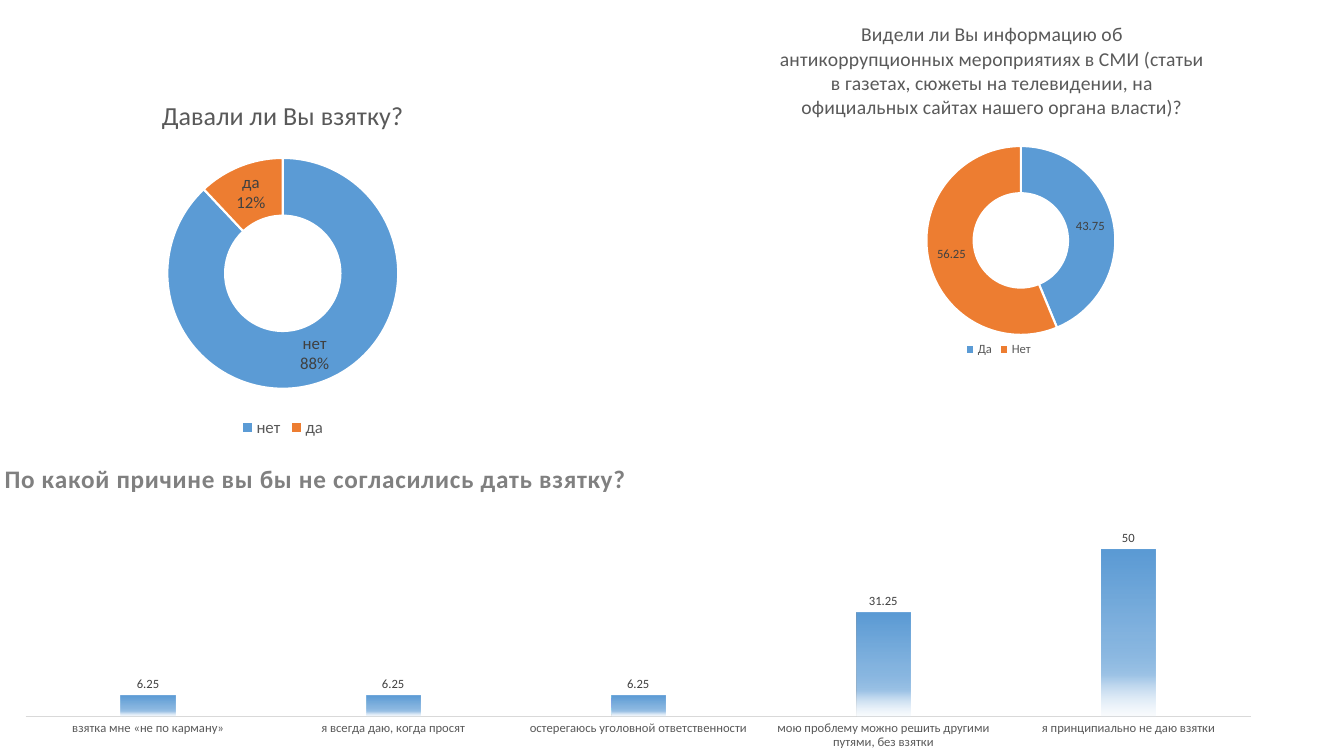
from lxml import etree
from pptx import Presentation
from pptx.chart.data import CategoryChartData
from pptx.dml.color import RGBColor
from pptx.enum.chart import XL_CHART_TYPE as ChartType
from pptx.enum.chart import XL_LABEL_POSITION as LabelPosition
from pptx.enum.chart import XL_LEGEND_POSITION as LegendPosition
from pptx.enum.chart import XL_TICK_MARK as TickMark
from pptx.oxml import parse_xml
from pptx.oxml.ns import nsdecls, qn
from pptx.util import Inches, Pt

BLACK = RGBColor(0x00, 0x00, 0x00)
WHITE = RGBColor(0xFF, 0xFF, 0xFF)
BLUE = RGBColor(0x5B, 0x9B, 0xD5)
LIGHT_BLUE = RGBColor(0x9D, 0xC3, 0xE6)
PALE_BLUE = RGBColor(0xDE, 0xEB, 0xF7)
ORANGE = RGBColor(0xED, 0x7D, 0x31)
DARK_GREY = RGBColor(0x40, 0x40, 0x40)
TEXT_GREY = RGBColor(0x59, 0x59, 0x59)
TITLE_GREY = RGBColor(0x80, 0x80, 0x80)
AXIS_GREY = RGBColor(0xD9, 0xD9, 0xD9)
BAR_STOPS = [(0, BLUE, 100), (51, BLUE, 75), (75, LIGHT_BLUE, 100), (100, PALE_BLUE, 15)]


def style_font(font, size, color, bold=False):
    """Set the face, size, colour and weight of a font."""
    font.name = "Calibri"
    font.size = Pt(size)
    font.bold = bold
    font.color.rgb = color


def make_layout(**places):
    """Return a manual chart layout holding the given settings."""
    layout = parse_xml(f"<c:layout {nsdecls('c')}><c:manualLayout/></c:layout>")
    for name, value in places.items():
        etree.SubElement(layout[0], qn(f"c:{name}")).set("val", str(value))
    return layout


def remove_layout(element):
    """Drop any layout that a chart part already has."""
    for previous in element.findall(qn("c:layout")):
        element.remove(previous)


def place_title(chart, x, y):
    """Put the chart title at a share of the chart width and height."""
    title = chart.chart_title._element
    remove_layout(title)
    title.find(qn("c:tx")).addnext(make_layout(xMode="edge", yMode="edge", x=x, y=y))


def place_plot(chart, x, y, width, height):
    """Put the inner plot area at shares of the chart size."""
    plot_area = chart.plots[0]._element.getparent()
    remove_layout(plot_area)
    plot_area.insert(0, make_layout(
        layoutTarget="inner", xMode="edge", yMode="edge", x=x, y=y, w=width, h=height
    ))


def add_chart(slide, kind, box, values, title, title_size, title_color=TEXT_GREY, bold=False):
    """Add a titled chart with one series."""
    data = CategoryChartData()
    data.categories = list(values)
    data.add_series("Series 1", list(values.values()))
    chart = slide.shapes.add_chart(kind, *map(Inches, box), data).chart
    style_font(chart.font, 10, BLACK)
    chart.has_title = True
    chart.chart_title.include_in_layout = False
    paragraph = chart.chart_title.text_frame.paragraphs[0]
    paragraph.text = title
    style_font(paragraph.runs[0].font, title_size, title_color, bold)
    chart.has_legend = False
    return chart


def add_labels(series, size):
    """Show the values of a series and return its labels."""
    labels = series.data_labels
    labels.show_value = True
    style_font(labels.font, size, DARK_GREY)
    return labels


def add_doughnut(slide, box, values, title, title_size, size):
    """Add a two-part doughnut with a legend and return the chart and labels."""
    chart = add_chart(slide, ChartType.DOUGHNUT, box, values, title, title_size)
    chart.has_legend = True
    chart.legend.position = LegendPosition.BOTTOM
    chart.legend.include_in_layout = False
    style_font(chart.legend.font, size, TEXT_GREY)
    plot = chart.plots[0]
    plot.vary_by_categories = True
    plot._element.find(qn("c:holeSize")).set("val", "75")
    series = plot.series[0]
    for index, color in enumerate((BLUE, ORANGE)):
        part = series.points[index].format
        part.fill.solid()
        part.fill.fore_color.rgb = color
        part.line.color.rgb = WHITE
        part.line.width = Pt(1.5)
    return chart, add_labels(series, size)


def show_shares(labels):
    """Label each part with its category above its percentage."""
    labels.show_value = False
    labels.show_category_name = True
    labels.show_percentage = True
    separator = parse_xml(f"<c:separator {nsdecls('c')}>\n</c:separator>")
    anchor = labels._element.find(qn("c:showBubbleSize"))
    if anchor is None:
        anchor = labels._element.find(qn("c:showPercent"))
    anchor.addnext(separator)


def fill_gradient(series, stops):
    """Fill a series from top to bottom with partly transparent stops."""
    marks = "".join(
        f'<a:gs pos="{place * 1000}"><a:srgbClr val="{color}">'
        f'<a:alpha val="{opacity * 1000}"/></a:srgbClr></a:gs>'
        for place, color, opacity in stops
    )
    gradient = parse_xml(
        f"<a:gradFill {nsdecls('a')}><a:gsLst>{marks}</a:gsLst>"
        '<a:lin ang="5400000" scaled="0"/></a:gradFill>'
    )
    series.format.line.fill.background()
    series._element.find(qn("c:spPr")).insert(0, gradient)


def add_columns(slide, box, values, title):
    """Add a column chart with gradient bars and a title at the left."""
    chart = add_chart(slide, ChartType.COLUMN_CLUSTERED, box, values, title, 18, TITLE_GREY, True)
    run = chart.chart_title.text_frame.paragraphs[0].runs[0]
    run._r.get_or_add_rPr().set("spc", "50")
    place_title(chart, 0, 0.01)
    plot = chart.plots[0]
    plot.vary_by_categories = False
    plot.gap_width = 355
    plot.overlap = -70
    fill_gradient(plot.series[0], BAR_STOPS)
    add_labels(plot.series[0], 9).position = LabelPosition.OUTSIDE_END
    chart.value_axis.visible = False
    chart.value_axis.has_major_gridlines = False
    axis = chart.category_axis
    axis.major_tick_mark = TickMark.NONE
    axis.format.line.color.rgb = AXIS_GREY
    axis.format.line.width = Pt(0.75)
    style_font(axis.tick_labels.font, 9, TEXT_GREY)


def main():
    """Build the slide with the three survey charts."""
    presentation = Presentation()
    presentation.slide_width = Inches(13.33)
    presentation.slide_height = Inches(7.5)
    slide = presentation.slides.add_slide(presentation.slide_layouts[6])

    bribe_box = (0, 0.79, 5.61, 3.59)
    bribe_values = {"нет": 88, "да": 12}
    _, labels = add_doughnut(slide, bribe_box, bribe_values, "Давали ли Вы взятку?", 18.6, 12)
    show_shares(labels)

    reasons = {
        "взятка мне «не по карману»": 6.25,
        "я всегда даю, когда просят": 6.25,
        "остерегаюсь уголовной ответственности": 6.25,
        "мою проблему можно решить другими путями, без взятки": 31.25,
        "я принципиально не даю взятки": 50,
    }
    reason_title = "По какой причине вы бы не согласились дать взятку?"
    add_columns(slide, (0, 4.5, 12.66, 3), reasons, reason_title)

    media_title = (
        "Видели ли Вы информацию об антикоррупционных мероприятиях в СМИ "
        "(статьи в газетах, сюжеты на телевидении, на официальных сайтах "
        "нашего органа власти)?"
    )
    media_values = {"Да": 43.75, "Нет": 56.25}
    chart, _ = add_doughnut(slide, (7.15, 0.17, 5.51, 3.41), media_values, media_title, 14, 9)
    place_title(chart, 0.1, 0)
    place_plot(chart, 0.37, 0.34, 0.34, 0.62)

    presentation.save("out.pptx")


if __name__ == "__main__":
    main()
